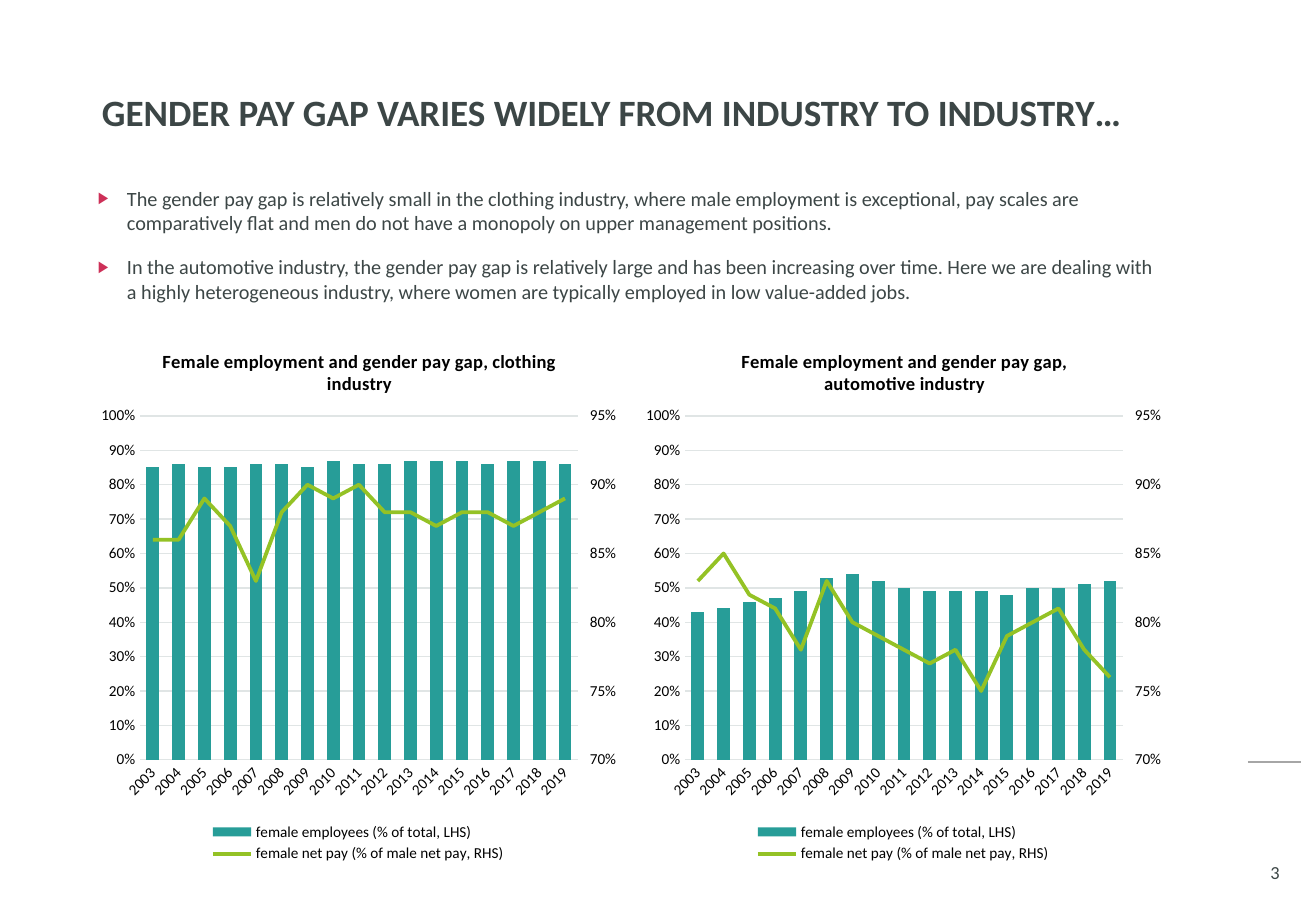
"""Build the slide on the gender pay gap in two industries."""
from copy import deepcopy

from lxml import etree
from pptx import Presentation
from pptx.chart.axis import ValueAxis
from pptx.chart.data import CategoryChartData
from pptx.dml.color import RGBColor
from pptx.enum.chart import (XL_CHART_TYPE, XL_LEGEND_POSITION,
                             XL_MARKER_STYLE, XL_TICK_MARK)
from pptx.enum.shapes import MSO_CONNECTOR
from pptx.enum.text import MSO_ANCHOR, PP_ALIGN
from pptx.oxml import parse_xml
from pptx.oxml.ns import nsdecls, qn
from pptx.util import Pt

COLUMNS = XL_CHART_TYPE.COLUMN_CLUSTERED
LEGEND_BOTTOM = XL_LEGEND_POSITION.BOTTOM
NO_MARKER = XL_MARKER_STYLE.NONE
TICK_NONE, TICK_OUT = XL_TICK_MARK.NONE, XL_TICK_MARK.OUTSIDE
STRAIGHT = MSO_CONNECTOR.STRAIGHT
TOP, MIDDLE = MSO_ANCHOR.TOP, MSO_ANCHOR.MIDDLE
LEFT, CENTER = PP_ALIGN.LEFT, PP_ALIGN.CENTER

EMU_PER_PX = 7526
FONT = "Calibri"
INK, BLACK, RULE, GRID = "3C4646", "000000", "A6A6A6", "E0E5E5"
BULLET, TEAL, GREEN = "CD3058", "279D98", "94C225"

HEADING = "GENDER PAY GAP VARIES WIDELY FROM INDUSTRY TO INDUSTRY…"
POINTS = [
    "The gender pay gap is relatively small in the clothing industry, where male "
    "employment is exceptional, pay scales are comparatively flat and men do not "
    "have a monopoly on upper management positions.",
    "In the automotive industry, the gender pay gap is relatively large and has been "
    "increasing over time. Here we are dealing with a highly heterogeneous industry, "
    "where women are typically employed in low value-added jobs.",
]
YEARS = [str(year) for year in range(2003, 2020)]
EMPLOYEES = "female employees (% of total, LHS)"
NET_PAY = "female net pay (% of male net pay, RHS)"
CHART_WIDTH, CHART_HEIGHT = 536, 547
INDUSTRIES = [
    ("clothing", 90, 69,
     [85, 86, 85, 85, 86, 86, 85, 87, 86, 86, 87, 87, 87, 86, 87, 87, 86],
     [86, 86, 89, 87, 83, 88, 90, 89, 90, 88, 88, 87, 88, 88, 87, 88, 89]),
    ("automotive", 635, 103,
     [43, 44, 46, 47, 49, 53, 54, 52, 50, 49, 49, 49, 48, 50, 50, 51, 52],
     [83, 85, 82, 81, 78, 83, 80, 79, 78, 77, 78, 75, 79, 80, 81, 78, 76]),
]


def px(*lengths):
    """Turn px lengths into a list of EMU."""
    return [length * EMU_PER_PX for length in lengths]


def rgb(code):
    """Turn a hex string into a colour."""
    return RGBColor.from_string(code)


def style_font(font, size, color, bold=False):
    """Set face, size, colour and weight."""
    font.name, font.size, font.bold = FONT, Pt(size), bold
    font.color.rgb = rgb(color)


def style_line(line, color, width):
    """Set the colour and width of a line."""
    line.color.rgb = rgb(color)
    line.width = Pt(width)


def add_bullet(paragraph):
    """Give a paragraph a hanging triangle bullet."""
    properties = paragraph._p.get_or_add_pPr()
    indent = px(29)[0]
    properties.set("marL", str(indent))
    properties.set("indent", str(-indent))
    color = etree.SubElement(properties, qn("a:buClr"))
    etree.SubElement(color, qn("a:srgbClr"), val=BULLET)
    etree.SubElement(properties, qn("a:buSzPct"), val="80000")
    etree.SubElement(properties, qn("a:buFont"), typeface="Arial")
    etree.SubElement(properties, qn("a:buChar"), char="▶")


def add_text(slide, box, texts, size, anchor=MIDDLE, align=LEFT, bold=False,
             bulleted=False, line_spacing=None):
    """Add a wrapping text box with one paragraph per text."""
    frame = slide.shapes.add_textbox(*px(*box)).text_frame
    frame.word_wrap = True
    frame.vertical_anchor = anchor
    for index, text in enumerate(texts):
        paragraph = frame.add_paragraph() if index else frame.paragraphs[0]
        if bulleted:
            add_bullet(paragraph)
        if index:
            paragraph.space_before = Pt(12)
        paragraph.alignment = align
        paragraph.line_spacing = line_spacing
        run = paragraph.add_run()
        run.text = text
        style_font(run.font, size, INK, bold)


def add_rule(slide, left, right, y):
    """Add a thin horizontal line."""
    rule = slide.shapes.add_connector(STRAIGHT, *px(left, y, right, y))
    style_line(rule.line, RULE, 1)
    etree.SubElement(rule._element.spPr, qn("a:effectLst"))


def place(part, index, inner=False, **lengths):
    """Place a chart part by px lengths measured within the chart."""
    for old in part.findall(qn("c:layout")):
        part.remove(old)
    layout = etree.Element(qn("c:layout"))
    manual = etree.SubElement(layout, qn("c:manualLayout"))
    if inner:
        etree.SubElement(manual, qn("c:layoutTarget"), val="inner")
    for key in "xy":
        etree.SubElement(manual, qn(f"c:{key}Mode"), val="edge")
    for key, length in lengths.items():
        whole = CHART_WIDTH if key in "xw" else CHART_HEIGHT
        etree.SubElement(manual, qn(f"c:{key}"), val=f"{length / whole:.4f}")
    part.insert(index, layout)


def style_axes(chart):
    """Style the year axis and the left percentage axis."""
    years, share = chart.category_axis, chart.value_axis
    for axis in (years, share):
        axis.major_tick_mark = axis.minor_tick_mark = TICK_NONE
        style_font(axis.tick_labels.font, 9, BLACK)
    style_line(years.format.line, GRID, 0.75)
    years._element.find(qn("c:txPr")).find(qn("a:bodyPr")).set("rot", "-2700000")
    share.format.line.fill.background()
    share.minimum_scale, share.maximum_scale, share.major_unit = 0, 1, 0.1
    share.tick_labels.number_format = "0%"
    share.tick_labels.number_format_is_linked = False
    style_line(share.major_gridlines.format.line, GRID, 0.75)


def move_pay_to_right_axis(chart):
    """Turn the second series into a line on its own right axis."""
    area = chart._chartSpace.chart.plotArea
    pay = chart.plots[0].series[1]._element
    for flag in pay.findall(qn("c:invertIfNegative")):
        pay.remove(flag)
    line_plot = parse_xml(
        f'<c:lineChart {nsdecls("c")}><c:grouping val="standard"/>'
        '<c:varyColors val="0"/><c:marker val="1"/>'
        '<c:axId val="501"/><c:axId val="502"/></c:lineChart>')
    line_plot.insert(2, pay)
    area.find(qn("c:barChart")).addnext(line_plot)

    left_scale = chart.value_axis._element
    hidden_years = deepcopy(chart.category_axis._element)
    right_scale = deepcopy(left_scale)
    left_scale.addnext(hidden_years)
    hidden_years.addnext(right_scale)
    for axis, own, other in ((hidden_years, "501", "502"), (right_scale, "502", "501")):
        axis.find(qn("c:axId")).set("val", own)
        axis.find(qn("c:crossAx")).set("val", other)
    hidden_years.find(qn("c:delete")).set("val", "1")
    right_scale.find(qn("c:axPos")).set("val", "r")
    right_scale.find(qn("c:crosses")).set("val", "max")
    pay_axis = ValueAxis(right_scale)
    pay_axis.has_major_gridlines = False
    pay_axis.major_tick_mark = TICK_OUT
    pay_axis.minimum_scale, pay_axis.maximum_scale, pay_axis.major_unit = 0.7, 0.95, 0.05


def add_industry_chart(slide, industry, left, title_left, employees, net_pay):
    """Add columns for employment and a line for relative pay."""
    data = CategoryChartData(number_format="0%")
    data.categories = YEARS
    for name, percents in ((EMPLOYEES, employees), (NET_PAY, net_pay)):
        data.add_series(name, [percent / 100 for percent in percents])
    box = px(left, 322, CHART_WIDTH, CHART_HEIGHT)
    chart = slide.shapes.add_chart(COLUMNS, *box, data).chart
    style_font(chart.font, 10, BLACK)
    style_axes(chart)
    move_pay_to_right_axis(chart)

    columns, lines = chart.plots
    columns.gap_width = 100
    columns.vary_by_categories = False
    fill = columns.series[0].format.fill
    fill.solid()
    fill.fore_color.rgb = rgb(TEAL)
    pay = lines.series[0]
    pay.smooth = False
    pay.marker.style = NO_MARKER
    style_line(pay.format.line, GREEN, 2.25)

    chart.has_title = True
    run = chart.chart_title.text_frame.paragraphs[0].add_run()
    run.text = f"Female employment and gender pay gap, {industry} industry"
    style_font(run.font, 11, BLACK, bold=True)
    chart.has_legend = True
    chart.legend.position = LEGEND_BOTTOM
    chart.legend.include_in_layout = False
    style_font(chart.legend.font, 9, BLACK)
    place(chart.chart_title._element, 1, x=title_left, y=23)
    place(chart.legend._element, 1, x=115, y=497, w=306, h=48)
    place(chart._chartSpace.chart.plotArea, 0, inner=True, x=50, y=94, w=438, h=344)


def main():
    """Build and save the slide."""
    deck = Presentation()
    deck.slide_width, deck.slide_height = px(1316, 911)
    slide = deck.slides.add_slide(deck.slide_layouts[6])
    add_text(slide, (1245, 847, 60, 50), ["3"], 10.9, align=CENTER)
    add_rule(slide, 1248, 1301, 762)
    add_text(slide, (90, 49, 1081, 132), [HEADING], 22, bold=True, line_spacing=0.9)
    add_text(slide, (86, 180, 1081, 132), POINTS, 12, anchor=TOP, bulleted=True)
    for industry in INDUSTRIES:
        add_industry_chart(slide, *industry)
    deck.save("out.pptx")


if __name__ == "__main__":
    main()
